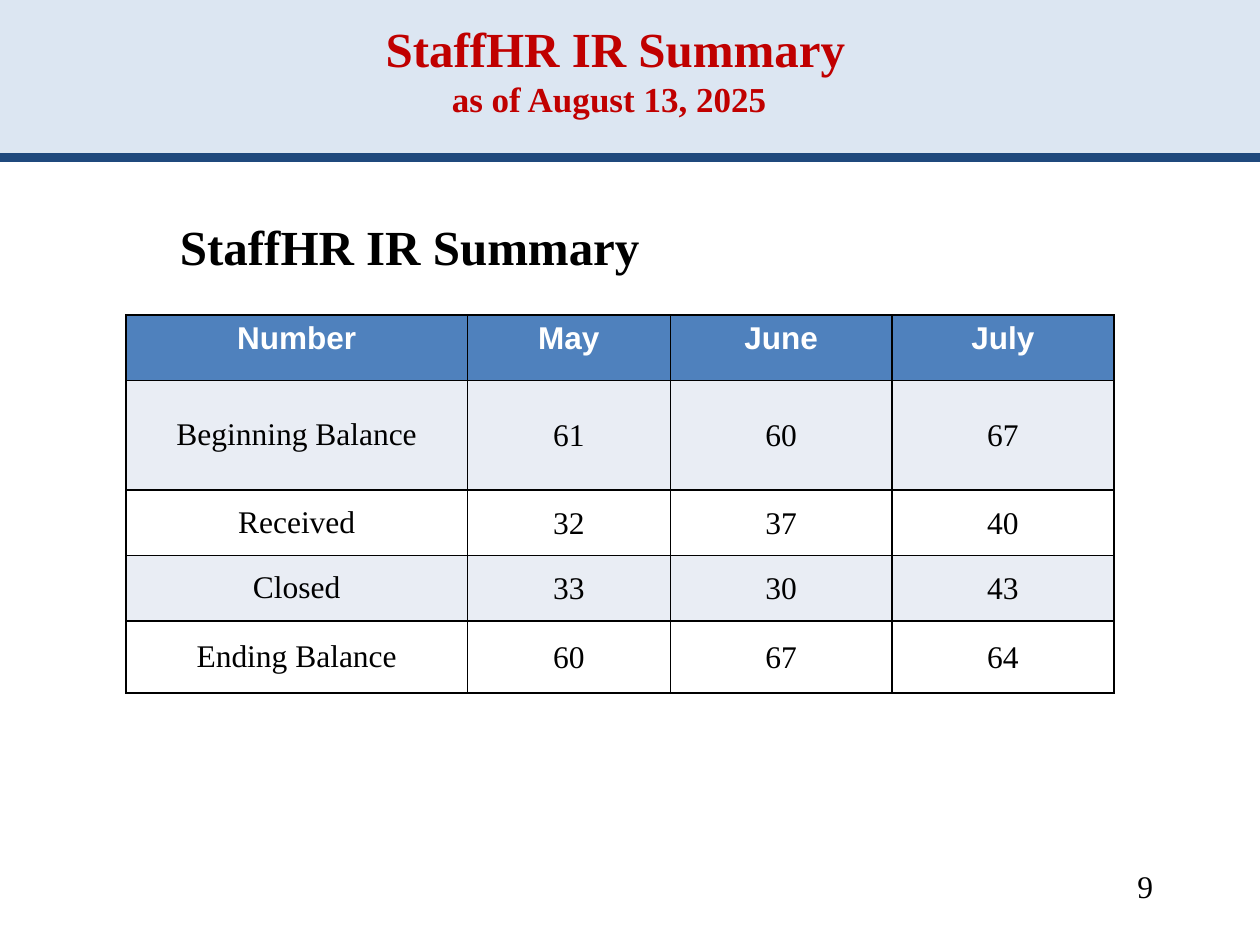
from lxml.etree import SubElement
from pptx import Presentation
from pptx.dml.color import RGBColor
from pptx.enum.shapes import MSO_CONNECTOR as CONN, MSO_SHAPE as SHAPE
from pptx.enum.text import MSO_ANCHOR as ANCHOR, PP_ALIGN as ALIGN
from pptx.oxml.ns import qn
from pptx.util import Inches, Pt

COLORS = {
    "band": "DCE6F2", "rule": "1F497D", "title": "C00000", "ink": "000000",
    "header": "4F81BD", "stripe": "E9EDF4", "white": "FFFFFF",
}
SERIF, SANS = "Times New Roman", "Arial"
HEADER = ["Number", "May", "June", "July"]
ROWS = [
    ["Beginning Balance", "61", "60", "67"],
    ["Received", "32", "37", "40"],
    ["Closed", "33", "30", "43"],
    ["Ending Balance", "60", "67", "64"],
]


def rgb(name):
    return RGBColor.from_string(COLORS[name])


def write(p, text, size=18, font=SERIF, color="ink", bold=False, align=ALIGN.LEFT):
    p.alignment = align
    r = p.add_run()
    r.text = text
    r.font.size, r.font.name, r.font.bold = Pt(size), font, bold
    r.font.color.rgb = rgb(color)


class SlideBuilder:
    def __init__(self, slide):
        self.s = slide

    def band(self, x, y, w, h):
        sp = self.s.shapes.add_shape(SHAPE.RECTANGLE, Inches(x), Inches(y), Inches(w), Inches(h))
        sp.shadow.inherit = False
        sp.fill.solid()
        sp.fill.fore_color.rgb = rgb("band")
        sp.line.fill.background()

    def rule(self, x1, x2, y, width):
        line = self.s.shapes.add_connector(CONN.STRAIGHT, Inches(x1), Inches(y), Inches(x2), Inches(y))
        line.line.color.rgb = rgb("rule")
        line.line.width = Pt(width)
        SubElement(line._element.spPr, qn("a:effectLst"))

    def text(self, x, y, w, h, *lines, anchor=ANCHOR.TOP, **style):
        tf = self.s.shapes.add_textbox(Inches(x), Inches(y), Inches(w), Inches(h)).text_frame
        tf.word_wrap = True
        tf.vertical_anchor = anchor
        p = tf.paragraphs[0]
        for i, (text, size) in enumerate(lines):
            if i:
                p.add_line_break()
            write(p, text, size=size, **style)

    def borders(self, cell):
        tc_pr = cell._tc.get_or_add_tcPr()
        for side in ("lnL", "lnR", "lnT", "lnB"):
            ln = SubElement(tc_pr, qn(f"a:{side}"), w=str(Pt(1)))
            fill = SubElement(ln, qn("a:solidFill"))
            SubElement(fill, qn("a:srgbClr"), val=COLORS["ink"])

    def cell(self, cell, text, fill, anchor, tight, **style):
        self.borders(cell)
        cell.fill.solid()
        cell.fill.fore_color.rgb = rgb(fill)
        cell.vertical_anchor = anchor
        if tight:
            cell.margin_left = cell.margin_right = cell.margin_top = Inches(0.01)
            cell.margin_bottom = 0
        write(cell.text_frame.paragraphs[0], text, align=ALIGN.CENTER, **style)

    def table(self, x, y, widths, heights, header, rows):
        frame = self.s.shapes.add_table(len(heights), len(widths), Inches(x), Inches(y),
                                        Inches(sum(widths)), Inches(sum(heights)))
        table = frame.table
        for col, width in zip(table.columns, widths):
            col.width = Inches(width)
        for row, height in zip(table.rows, heights):
            row.height = Inches(height)
        for c, text in enumerate(header):
            self.cell(table.cell(0, c), text, "header", ANCHOR.TOP, False,
                      font=SANS, color="white", bold=True)
        for r, values in enumerate(rows, 1):
            fill = "stripe" if r % 2 else "white"
            for c, text in enumerate(values):
                self.cell(table.cell(r, c), text, fill, ANCHOR.MIDDLE, c > 0)


def main():
    prs = Presentation()
    prs.slide_width, prs.slide_height = Inches(10), Inches(7.5)
    b = SlideBuilder(prs.slides.add_slide(prs.slide_layouts[6]))
    b.band(0, 0, 10, 1.28)
    b.rule(0, 10, 1.25, 5.5)
    b.text(0.17, 0.3, 9.33, 0.7, (" StaffHR IR Summary", 28), ("as of August 13, 2025", 20),
           anchor=ANCHOR.BOTTOM, color="title", bold=True, align=ALIGN.CENTER)
    b.text(1.33, 1.67, 8.08, 0.57, ("StaffHR IR Summary", 28), bold=True)
    b.table(1, 2.5, [2.71, 1.61, 1.76, 1.76], [0.52, 0.87, 0.52, 0.52, 0.57], HEADER, ROWS)
    b.text(7.17, 6.83, 2.08, 0.5, ("9", 18), align=ALIGN.RIGHT)
    prs.save("out.pptx")


if __name__ == "__main__":
    main()
